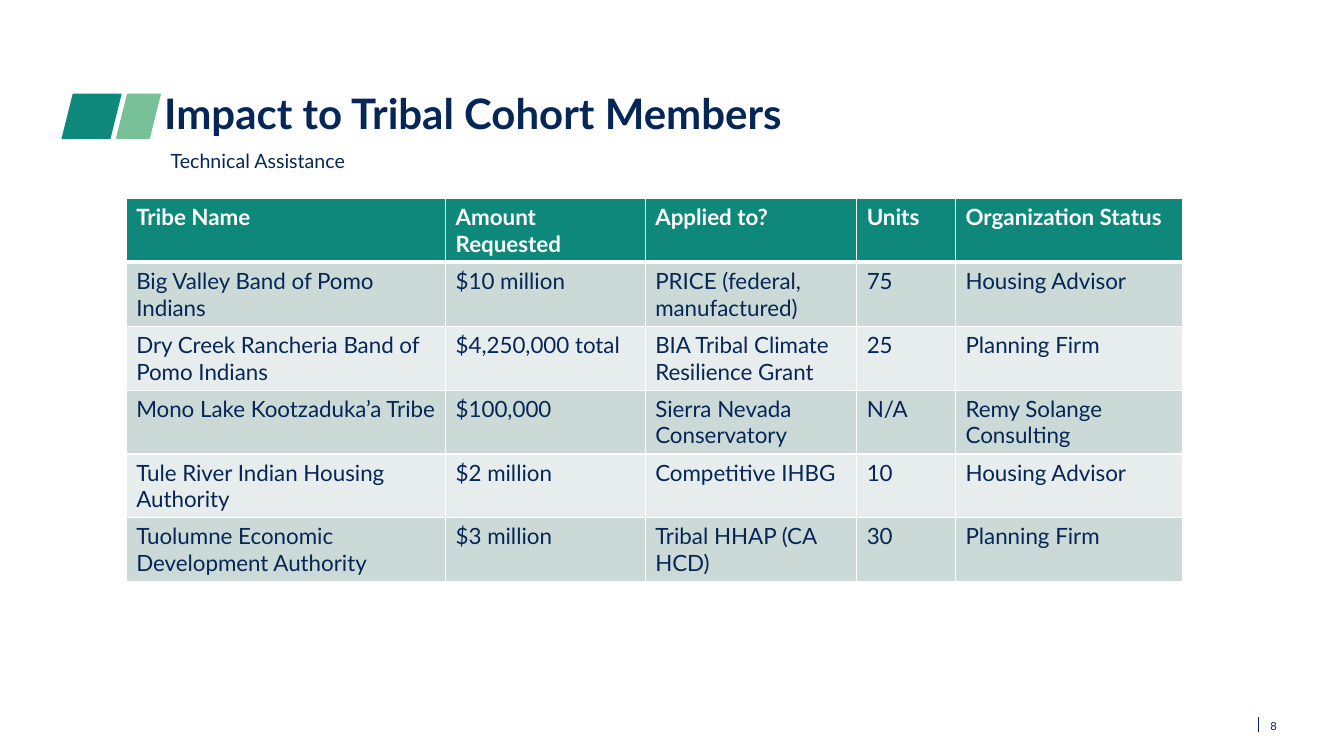
from dataclasses import dataclass

from lxml import etree
from pptx import Presentation
from pptx.dml.color import RGBColor
from pptx.enum import shapes, text
from pptx.oxml import ns
from pptx.util import Cm, Pt

TITLE = "Impact to Tribal Cohort Members"
SUBTITLE = "Technical Assistance"
PAGE_NUMBER = "8"
HEADINGS = ("Tribe Name", "Amount Requested", "Applied to?", "Units", "Organization Status")
GRANTS = [
    ("Big Valley Band of Pomo Indians", "$10 million", "PRICE (federal, manufactured)",
     "75", "Housing Advisor"),
    ("Dry Creek Rancheria Band of Pomo Indians", "$4,250,000 total",
     "BIA Tribal Climate Resilience Grant", "25", "Planning Firm"),
    ("Mono Lake Kootzaduka’a Tribe", "$100,000", "Sierra Nevada Conservatory",
     "N/A", "Remy Solange Consulting"),
    ("Tule River Indian Housing Authority", "$2 million", "Competitive IHBG",
     "10", "Housing Advisor"),
    ("Tuolumne Economic Development Authority", "$3 million", "Tribal HHAP (CA HCD)",
     "30", "Planning Firm"),
]
COLUMN_WIDTHS = (8.05, 5.03, 5.33, 2.49, 5.72)
ROW_HEIGHT = 1.61
BAND_TOP, BAND_HEIGHT = 2.36, 1.14


@dataclass(frozen=True)
class Theme:
    font: str = "Lato"
    navy: str = "052656"
    teal: str = "0D887A"
    green: str = "77C098"
    white: str = "FFFFFF"
    bands: tuple = ("CCDAD7", "E7EDEC")
    title: int = 30
    table: int = 16
    subtitle: int = 14
    number: int = 8


THEME = Theme()


def set_font(para, size, color, bold=False):
    font = para.font
    font.name, font.size, font.bold = THEME.font, Pt(size), bold
    font.color.rgb = RGBColor.from_string(color)


def add_text(page, words, place, size, bold=False, spacing=None,
             anchor=text.MSO_ANCHOR.TOP, align=text.PP_ALIGN.LEFT):
    frame = page.shapes.add_textbox(*map(Cm, place)).text_frame
    frame.word_wrap = True
    frame.vertical_anchor = anchor
    frame.margin_left = frame.margin_top = frame.margin_right = frame.margin_bottom = 0
    para = frame.paragraphs[0]
    para.text, para.alignment, para.line_spacing = words, align, spacing
    set_font(para, size, THEME.navy, bold)


def add_slanted_block(page, left, width, color):
    block = page.shapes.add_shape(shapes.MSO_SHAPE.PARALLELOGRAM, Cm(left), Cm(BAND_TOP),
                                  Cm(width), Cm(BAND_HEIGHT))
    block.shadow.inherit = False
    block.fill.solid()
    block.fill.fore_color.rgb = RGBColor.from_string(color)
    block.line.fill.background()


def set_borders(cell, **widths):
    """Draw white borders; widths in points are keyed by side: L, R, T, B."""
    properties = cell._tc.get_or_add_tcPr()
    for side, width in widths.items():
        line = etree.SubElement(properties, ns.qn(f"a:ln{side}"), w=str(Pt(width)))
        fill = etree.SubElement(line, ns.qn("a:solidFill"))
        etree.SubElement(fill, ns.qn("a:srgbClr"), val=THEME.white)


def add_grant_table(page):
    rows = [HEADINGS, *GRANTS]
    table = page.shapes.add_table(len(rows), len(HEADINGS), Cm(3.18), Cm(5),
                                  Cm(sum(COLUMN_WIDTHS)), Cm(ROW_HEIGHT * len(rows))).table
    for column, width in zip(table.columns, COLUMN_WIDTHS):
        column.width = Cm(width)
    for r, values in enumerate(rows):
        table.rows[r].height = Cm(ROW_HEIGHT)
        heading = r == 0
        fill = THEME.teal if heading else THEME.bands[(r - 1) % 2]
        for c, value in enumerate(values):
            cell = table.cell(r, c)
            set_borders(cell, L=1, R=1, T=3 if r == 1 else 1, B=3 if heading else 1)
            cell.fill.solid()
            cell.fill.fore_color.rgb = RGBColor.from_string(fill)
            cell.text = value
            set_font(cell.text_frame.paragraphs[0], THEME.table,
                     THEME.white if heading else THEME.navy, heading)


def add_page_number(page):
    rule = page.shapes.add_connector(shapes.MSO_CONNECTOR.STRAIGHT,
                                     Cm(31.72), Cm(18.08), Cm(31.72), Cm(18.44))
    rule.line.color.rgb = RGBColor.from_string(THEME.navy)
    rule.line.width = Pt(0.5)
    etree.SubElement(rule._element.spPr, ns.qn("a:effectLst"))
    add_text(page, PAGE_NUMBER, (31.8, 18.14, 0.38, 0.33), THEME.number,
             anchor=text.MSO_ANCHOR.MIDDLE, align=text.PP_ALIGN.RIGHT)


def main():
    deck = Presentation()
    deck.slide_width, deck.slide_height = Cm(33.87), Cm(19.05)
    page = deck.slides.add_slide(deck.slide_layouts[6])
    add_slanted_block(page, 1.55, 1.52, THEME.teal)
    add_slanted_block(page, 2.92, 1.14, THEME.green)
    add_text(page, TITLE, (4.14, BAND_TOP, 28.02, BAND_HEIGHT), THEME.title, bold=True,
             spacing=0.9, anchor=text.MSO_ANCHOR.BOTTOM)
    add_text(page, SUBTITLE, (4.3, 3.81, 28.02, 0.61), THEME.subtitle, spacing=0.9)
    add_grant_table(page)
    add_page_number(page)
    deck.save("out.pptx")


if __name__ == "__main__":
    main()
